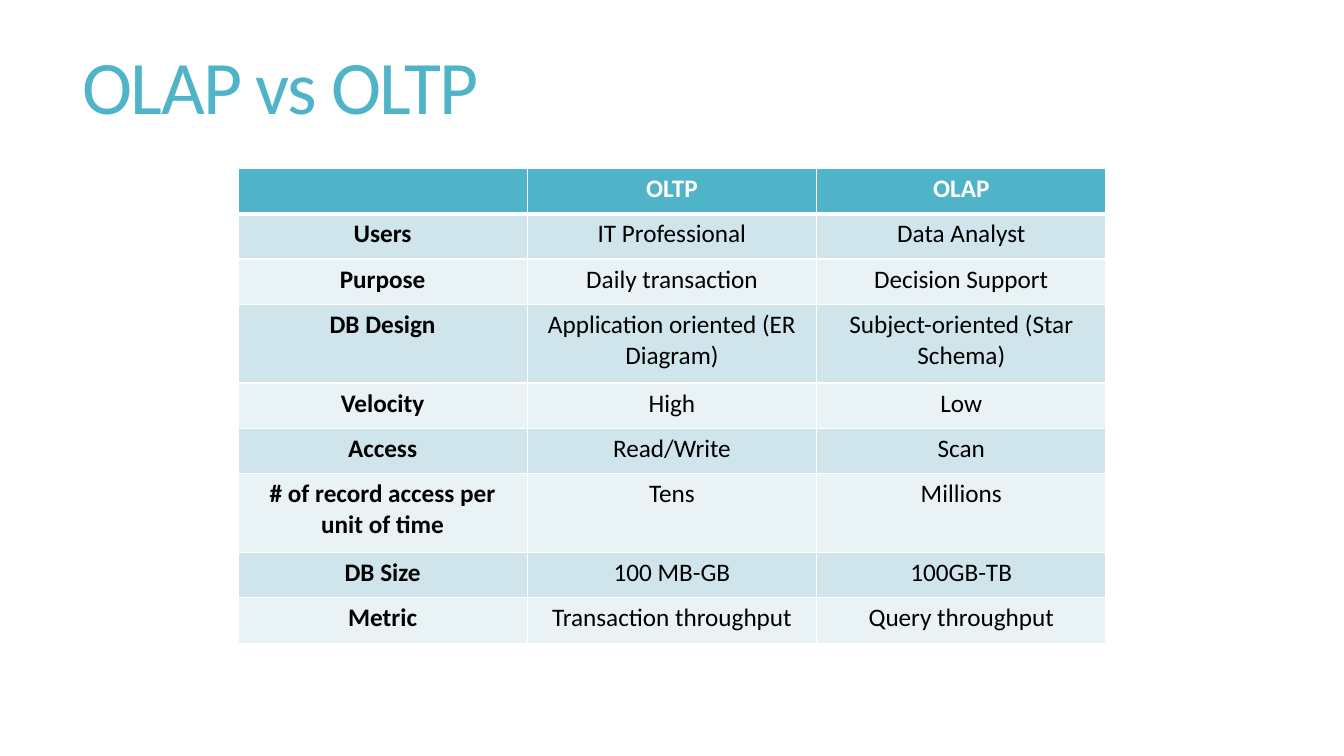
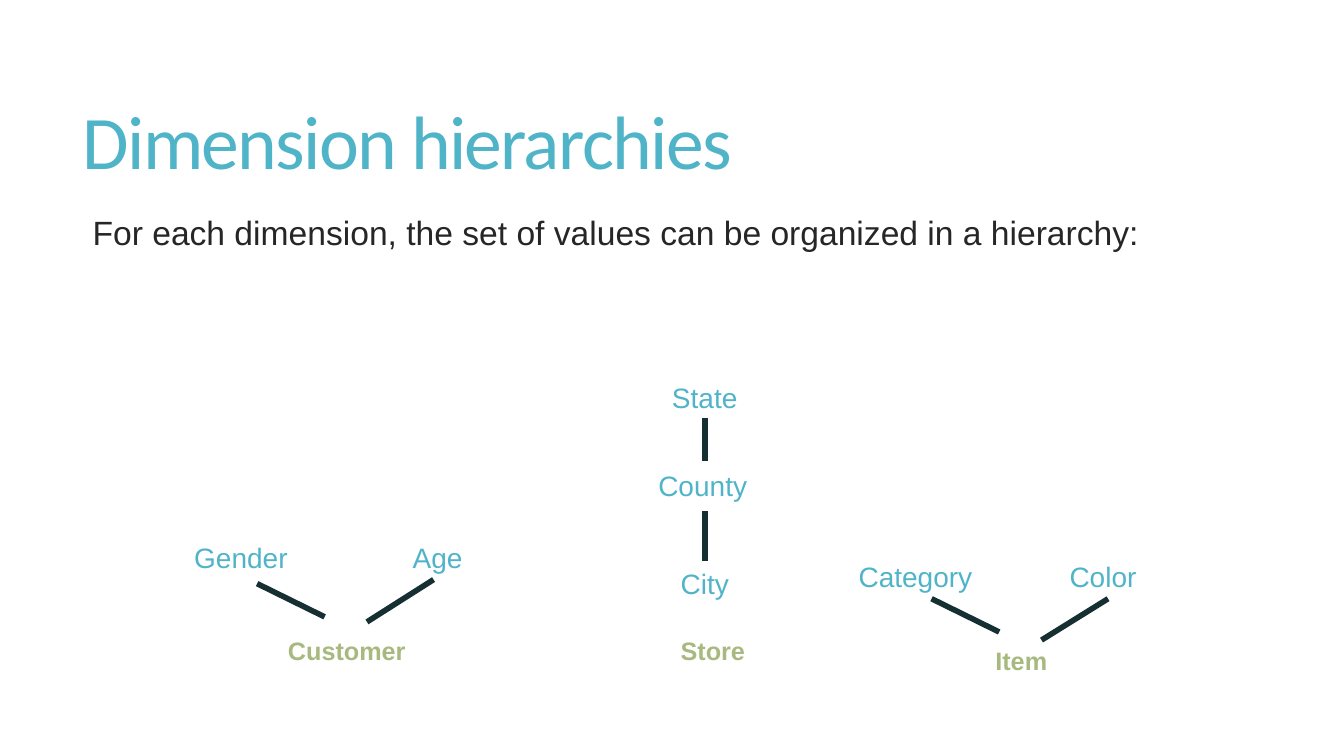
"""Build two slides: OLAP compared with OLTP, and dimension hierarchies."""
import dataclasses

import lxml.etree
import pptx
import pptx.dml.color
import pptx.enum.shapes
import pptx.enum.text
import pptx.oxml.ns
import pptx.util

Inches = pptx.util.Inches
Pt = pptx.util.Pt
Align = pptx.enum.text.PP_ALIGN
Anchor = pptx.enum.text.MSO_ANCHOR
qn = pptx.oxml.ns.qn

COLORS = {
    "accent": "50B4C8",
    "dimension": "A8B97F",
    "branch": "162F33",
    "body": "262626",
    "black": "000000",
    "white": "FFFFFF",
    "band_dark": "D0E5EB",
    "band_light": "E9F2F5",
}

COMPARISON = [
    ("", "OLTP", "OLAP"),
    ("Users", "IT Professional", "Data Analyst"),
    ("Purpose", "Daily transaction", "Decision Support"),
    ("DB Design", "Application oriented (ER Diagram)", "Subject-oriented (Star Schema)"),
    ("Velocity", "High", "Low"),
    ("Access", "Read/Write", "Scan"),
    ("# of record access per unit of time", "Tens", "Millions"),
    ("DB Size", "100 MB-GB", "100GB-TB"),
    ("Metric", "Transaction throughput", "Query throughput"),
]
TALL_ROWS = {3, 6}
COLUMN_WIDTH = 2.87
LABEL_WIDTH = 1.6


@dataclasses.dataclass(frozen=True)
class Label:
    text: str
    center: float
    top: float


@dataclasses.dataclass(frozen=True)
class Branch:
    start: tuple[float, float]
    end: tuple[float, float]


DIMENSIONS = [
    Label("Customer", 3.44, 6.25),
    Label("Store", 7.07, 6.25),
    Label("Item", 10.13, 6.35),
]
LEVELS = [
    Label("Gender", 2.39, 5.31),
    Label("Age", 4.34, 5.31),
    Label("State", 6.99, 3.73),
    Label("County", 6.97, 4.6),
    Label("City", 6.99, 5.57),
    Label("Category", 9.08, 5.5),
    Label("Color", 10.94, 5.5),
]
BRANCHES = [
    Branch((2.55, 5.79), (3.22, 6.12)),
    Branch((3.64, 6.17), (4.3, 5.75)),
    Branch((6.99, 4.15), (6.99, 4.57)),
    Branch((6.99, 5.07), (6.99, 5.57)),
    Branch((9.24, 5.94), (9.91, 6.27)),
    Branch((10.33, 6.35), (10.99, 5.94)),
]


def rgb(name: str) -> pptx.dml.color.RGBColor:
    return pptx.dml.color.RGBColor.from_string(COLORS[name])


def write_text(frame, text: str, *, size: float, color: str, font: str = "Calibri",
               bold: bool = False, align=Align.LEFT, line_spacing: float = 1.0,
               tracking: float = 0) -> None:
    paragraph = frame.paragraphs[0]
    paragraph.alignment = align
    paragraph.line_spacing = line_spacing
    run = paragraph.add_run()
    run.text = text
    run.font.name = font
    run.font.size = Pt(size)
    run.font.bold = bold
    run.font.color.rgb = rgb(color)
    if tracking:
        run._r.get_or_add_rPr().set("spc", str(round(tracking * 100)))


def add_text(slide, text: str, left: float, top: float, width: float, height: float,
             anchor=Anchor.TOP, **text_format) -> None:
    shape = slide.shapes.add_textbox(Inches(left), Inches(top), Inches(width), Inches(height))
    shape.text_frame.word_wrap = True
    shape.text_frame.vertical_anchor = anchor
    write_text(shape.text_frame, text, **text_format)


def add_titled_slide(presentation, title: str, top: float):
    slide = presentation.slides.add_slide(presentation.slide_layouts[6])
    add_text(slide, title, 0.72, top, 11.78, 1.81, anchor=Anchor.MIDDLE,
             size=54, color="accent", line_spacing=0.85, tracking=-1.2)
    return slide


def add_label(slide, label: Label, **text_format) -> None:
    add_text(slide, label.text, label.center - LABEL_WIDTH / 2, label.top, LABEL_WIDTH, 0.44,
             font="Arial", align=Align.CENTER, **text_format)


def add_branch(slide, branch: Branch) -> None:
    points = (Inches(value) for value in branch.start + branch.end)
    connector = slide.shapes.add_connector(pptx.enum.shapes.MSO_CONNECTOR.STRAIGHT, *points)
    connector.line.color.rgb = rgb("branch")
    connector.line.width = Pt(4)
    lxml.etree.SubElement(connector._element.spPr, qn("a:effectLst"))


def style_cell(cell, fill: str, bottom_width: float) -> None:
    properties = cell._tc.get_or_add_tcPr()
    for side, width in (("L", 1), ("R", 1), ("T", 1), ("B", bottom_width)):
        border = lxml.etree.SubElement(properties, qn(f"a:ln{side}"), w=str(Pt(width)))
        solid = lxml.etree.SubElement(border, qn("a:solidFill"))
        lxml.etree.SubElement(solid, qn("a:srgbClr"), val=COLORS["white"])
    cell.fill.solid()
    cell.fill.fore_color.rgb = rgb(fill)


def add_comparison(slide) -> None:
    heights = [0.78 if row in TALL_ROWS else 0.45 for row in range(len(COMPARISON))]
    columns = len(COMPARISON[0])
    table = slide.shapes.add_table(
        len(COMPARISON), columns, Inches(2.36), Inches(1.67),
        Inches(COLUMN_WIDTH * columns), Inches(sum(heights))).table
    for column in table.columns:
        column.width = Inches(COLUMN_WIDTH)
    for row, texts in enumerate(COMPARISON):
        table.rows[row].height = Inches(heights[row])
        header = row == 0
        fill = "accent" if header else "band_dark" if row % 2 else "band_light"
        for column, text in enumerate(texts):
            cell = table.cell(row, column)
            style_cell(cell, fill, 3 if header else 1)
            write_text(cell.text_frame, text, size=18, align=Align.CENTER,
                       color="white" if header else "black", bold=header or column == 0)


def add_hierarchies(slide) -> None:
    add_text(slide, "For each dimension, the set of values can be organized in a hierarchy:",
             0.82, 2.11, 12.01, 1.25, size=24, color="body", font="Arial", line_spacing=0.85)
    for label in DIMENSIONS:
        add_label(slide, label, size=18, color="dimension", bold=True)
    for label in LEVELS:
        add_label(slide, label, size=20, color="accent")
    for branch in BRANCHES:
        add_branch(slide, branch)


def main() -> None:
    presentation = pptx.Presentation()
    presentation.slide_width = Inches(13.33)
    presentation.slide_height = Inches(7.5)
    add_comparison(add_titled_slide(presentation, "OLAP vs OLTP", 0))
    add_hierarchies(add_titled_slide(presentation, "Dimension hierarchies", 0.55))
    presentation.save("out.pptx")


if __name__ == "__main__":
    main()
